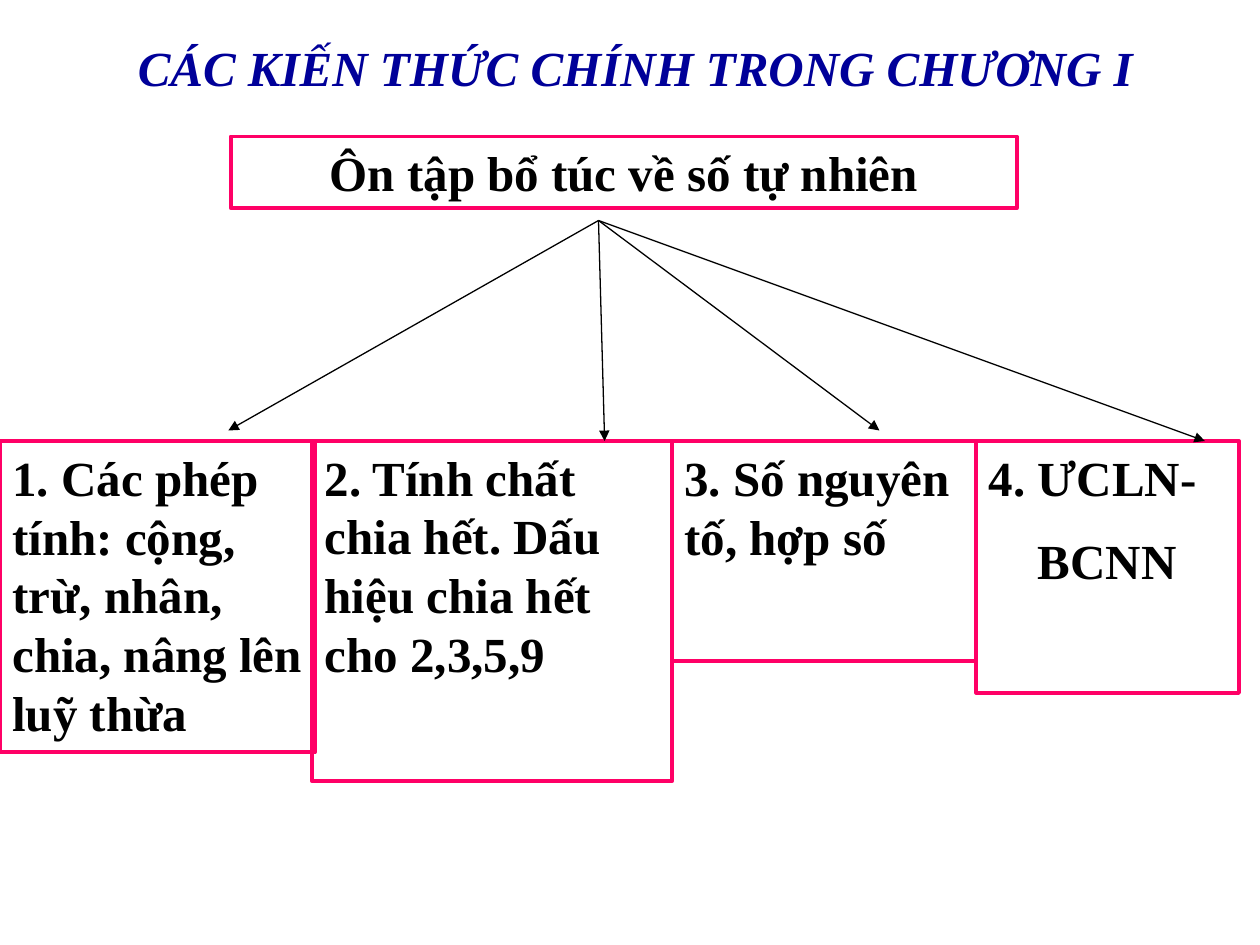
from dataclasses import dataclass

from lxml.etree import SubElement
from pptx import Presentation
from pptx.dml.color import RGBColor
from pptx.enum.shapes import MSO_CONNECTOR as Connector, MSO_SHAPE as Shape
from pptx.enum.text import MSO_ANCHOR as Anchor, PP_ALIGN as Align
from pptx.oxml.ns import qn
from pptx.util import Pt


@dataclass(frozen=True)
class Theme:
    font: str = "Times New Roman"
    size: float = 28
    title: RGBColor = RGBColor(0x00, 0x00, 0x99)
    ink: RGBColor = RGBColor(0x00, 0x00, 0x00)
    border: RGBColor = RGBColor(0xFF, 0x00, 0x66)
    border_width: float = 2.25
    arrow_width: float = 0.75


THEME = Theme()
TITLE = "CÁC KIẾN THỨC CHÍNH TRONG CHƯƠNG I"
ROOT = "Ôn tập bổ túc về số tự nhiên"
# Paragraphs, left, width, height, arrow tip (x, y)
TOPICS = [
    (["1. Các phép tính: cộng, trừ, nhân, chia, nâng lên luỹ thừa"], 0, 180, 178, (130.5, 246)),
    (["2. Tính chất chia hết. Dấu hiệu chia hết cho 2,3,5,9"], 178.5, 205.5, 194.5, (345.5, 252)),
    (["3. Số nguyên tố, hợp số"], 384, 174, 126, (502.5, 246)),
    (["4. ƯCLN-", "BCNN"], 558, 150, 144, (688.5, 252)),
]
TOPIC_TOP = 252
ARROW_START = (342, 126)


def write(shape, paragraphs, color, align=Align.LEFT, italic=False):
    """Fill a shape with bold text; paragraphs after the first are indented."""
    frame = shape.text_frame
    frame.text = "\n".join(paragraphs)
    frame.word_wrap = True
    frame.vertical_anchor = Anchor.TOP
    for index, paragraph in enumerate(frame.paragraphs):
        paragraph.alignment = align
        if index:
            paragraph.space_before = Pt(THEME.size / 2)
            paragraph._p.get_or_add_pPr().set("marL", str(Pt(THEME.size)))
        for run in paragraph.runs:
            font = run.font
            font.name, font.size = THEME.font, Pt(THEME.size)
            font.bold, font.italic = True, italic
            font.color.rgb = color


def add_box(slide, paragraphs, left, top, width, height, align=Align.LEFT):
    box = slide.shapes.add_shape(Shape.RECTANGLE, Pt(left), Pt(top), Pt(width), Pt(height))
    box.shadow.inherit = False
    box.fill.background()
    box.line.color.rgb = THEME.border
    box.line.width = Pt(THEME.border_width)
    write(box, paragraphs, THEME.ink, align)


def add_arrow(slide, start, tip):
    arrow = slide.shapes.add_connector(Connector.STRAIGHT, *map(Pt, start + tip))
    arrow.line.color.rgb = THEME.ink
    arrow.line.width = Pt(THEME.arrow_width)
    SubElement(arrow.line._get_or_add_ln(), qn("a:tailEnd"), type="triangle")
    SubElement(arrow._element.spPr, qn("a:effectLst"))


def main():
    deck = Presentation()
    deck.slide_width, deck.slide_height = Pt(720), Pt(540)
    slide = deck.slides.add_slide(deck.slide_layouts[6])

    title = slide.shapes.add_textbox(Pt(6), Pt(18), Pt(714), Pt(37))
    write(title, [TITLE], THEME.title, Align.CENTER, italic=True)
    add_box(slide, [ROOT], 132, 78, 449, 41, Align.CENTER)
    for paragraphs, left, width, height, _ in TOPICS:
        add_box(slide, paragraphs, left, TOPIC_TOP, width, height)
    for *_, tip in TOPICS:
        add_arrow(slide, ARROW_START, tip)

    deck.save("out.pptx")


if __name__ == "__main__":
    main()
